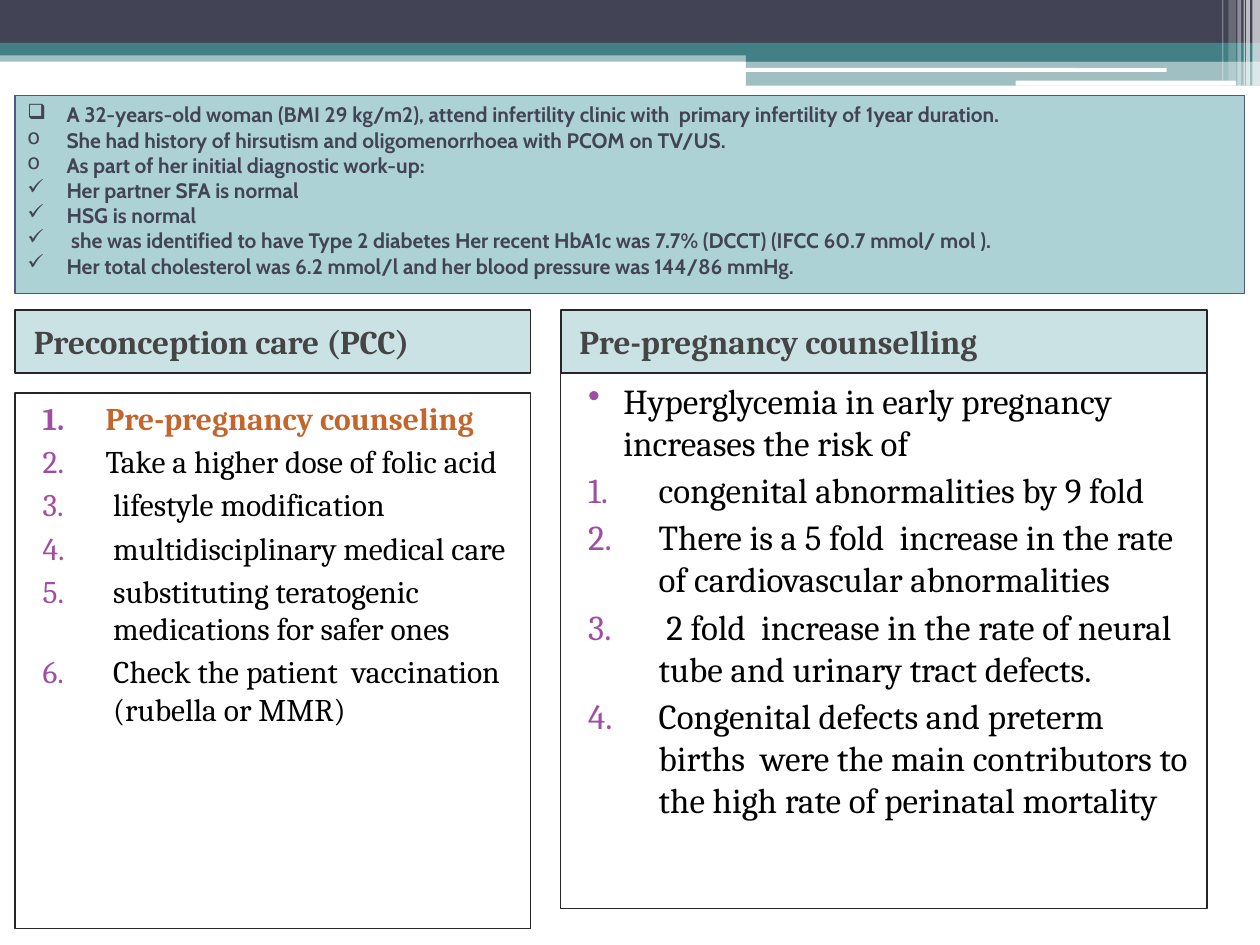
from lxml import etree
from pptx import Presentation
from pptx import util as u
from pptx.dml.color import RGBColor
from pptx.enum import shapes, text
from pptx.oxml.ns import qn

RECT = shapes.MSO_SHAPE.RECTANGLE
ROUND = shapes.MSO_SHAPE.ROUNDED_RECTANGLE
NAVY, TEAL, WHITE, EDGE, PURPLE = "424456", "438086", "FFFFFF", "262626", "A04DA3"


def add_box(place, fill=None, alpha=100, line=None, width=1, kind=RECT):
    """Add a flat shape; alpha is the fill's opacity in percent."""
    box = page.shapes.add_shape(kind, *[u.Inches(v) for v in place])
    box.shadow.inherit = False
    if fill:
        box.fill.solid()
        box.fill.fore_color.rgb = RGBColor.from_string(fill)
        if alpha < 100:
            color = box.fill._xPr.find(qn("a:solidFill"))[0]
            etree.SubElement(color, qn("a:alpha"), val=str(alpha * 1000))
    else:
        box.fill.background()
    if line:
        box.line.color.rgb = RGBColor.from_string(line)
        box.line.width = u.Pt(width)
    else:
        box.line.fill.background()
    return box


def write(box, lines, font, before=0, bullet_color=None, anchor="TOP"):
    """Fill a box with (text, bullet, left, hanging, font changes) lines."""
    frame = box.text_frame
    frame.word_wrap = True
    frame.vertical_anchor = text.MSO_ANCHOR[anchor]
    for i, (words, bullet, left, hanging, changes) in enumerate(lines):
        para = frame.paragraphs[0] if i == 0 else frame.add_paragraph()
        para.alignment = text.PP_ALIGN.LEFT
        para.space_before = u.Pt(before)
        props = para._p.get_or_add_pPr()
        props.set("marL", str(u.Inches(left)))
        props.set("indent", str(-u.Inches(hanging)))
        if bullet and bullet_color:
            color = etree.SubElement(props, qn("a:buClr"))
            etree.SubElement(color, qn("a:srgbClr"), val=bullet_color)
        if bullet == "1.":
            etree.SubElement(props, qn("a:buFont"), typeface=font["name"])
            etree.SubElement(props, qn("a:buAutoNum"), type="arabicPeriod")
        elif bullet:
            etree.SubElement(props, qn("a:buChar"), char=bullet)
        span = para.add_run()
        span.text = words
        values = {**font, **changes}
        span.font.color.rgb = RGBColor.from_string(values.pop("color"))
        for name, value in values.items():
            setattr(span.font, name, value)


deck = Presentation()
deck.slide_width, deck.slide_height = u.Inches(10), u.Inches(7.5)
page = deck.slides.add_slide(deck.slide_layouts[6])

# Header bands
for place, fill, alpha in [
    ((0, 0.4, 10, 0.09), TEAL, 50),
    ((0, 0, 10, 0.34), NAVY, 100),
    ((0, 0.34, 10, 0.1), TEAL, 100),
    ((5.92, 0.39, 4.08, 0.1), TEAL, 100),
    ((5.92, 0.48, 4.08, 0.2), TEAL, 50),
]:
    add_box(place, fill, alpha)
for place in [(5.91, 0.54, 3.35, 0.03), (8.06, 0.64, 1.75, 0.04)]:
    add_box(place, WHITE, kind=ROUND)

# Pale stripes at the right end of the header
for left, width, height, alpha in [
    (9.94, 0.06, 0.68, 65), (9.89, 0.03, 0.68, 65), (9.87, 0.01, 0.68, 60),
    (9.82, 0.03, 0.68, 40), (9.75, 0.06, 0.64, 20), (9.7, 0.01, 0.64, 30),
]:
    add_box((left, 0, width, height), WHITE, alpha)

# Two columns, each a heading above a framed list
care = [
    ("Pre-pregnancy counseling", "1.", 0.62, 0.5, {"bold": True, "color": "C4652D"}),
    ("Take a higher dose of folic acid", "1.", 0.62, 0.5, {}),
] + [(words, "1.", 0.68, 0.56, {}) for words in (
    "lifestyle modification",
    "multidisciplinary medical care",
    "substituting teratogenic medications for safer ones",
    "Check the patient  vaccination (rubella or MMR)",
)]
risks = [
    ("Hyperglycemia in early pregnancy increases the risk of", "•", 0.4, 0.28, {}),
] + [(words, "1.", 0.68, 0.56, {}) for words in (
    "congenital abnormalities by 9 fold",
    "There is a 5 fold  increase in the rate of cardiovascular abnormalities",
    " 2 fold  increase in the rate of neural tube and urinary tract defects.",
    "Congenital defects and preterm births  were the main contributors to "
    "the high rate of perinatal mortality",
)]
heading_font = {"name": "Cambria", "size": u.Pt(19), "bold": True, "color": "454545"}
for title, left, width, top, size, lines in [
    ("Preconception care (PCC)", 0.12, 4.09, 3.12, 18, care),
    ("Pre-pregnancy counselling", 4.45, 5.13, 2.96, 20, risks),
]:
    heading = add_box((left, 2.46, width, 0.5), "328E97", 25, EDGE)
    write(heading, [(title, None, 0.05, 0, {})], heading_font, 3, anchor="MIDDLE")
    panel = add_box((left, top, width, 4.25), line=EDGE, width=0.75)
    list_font = {"name": "Cambria", "size": u.Pt(size), "bold": False, "color": "000000"}
    write(panel, lines, list_font, 3, PURPLE)

# Case history
history = [
    ("❑", "A 32-years-old woman (BMI 29 kg/m2), attend infertility clinic with  "
          "primary infertility of 1year duration."),
    ("o", "She had history of hirsutism and oligomenorrhoea with PCOM on TV/US."),
    ("o", "As part of her initial diagnostic work-up:"),
    ("✓", "Her partner SFA is normal"),
    ("✓", "HSG is normal"),
    ("✓", " she was identified to have Type 2 diabetes Her recent HbA1c was 7.7% "
          "(DCCT) (IFCC 60.7 mmol/ mol )."),
    ("✓", "Her total cholesterol was 6.2 mmol/l and her blood pressure was 144/86 mmHg."),
]
case = add_box((0.12, 0.76, 9.76, 1.57), "ADD2D6", line="53548A", width=0.75)
write(case, [(words, mark, 0.31, 0.31, {}) for mark, words in history],
      {"name": "Cabin", "size": u.Pt(12), "bold": True, "color": NAVY})

deck.save("out.pptx")
